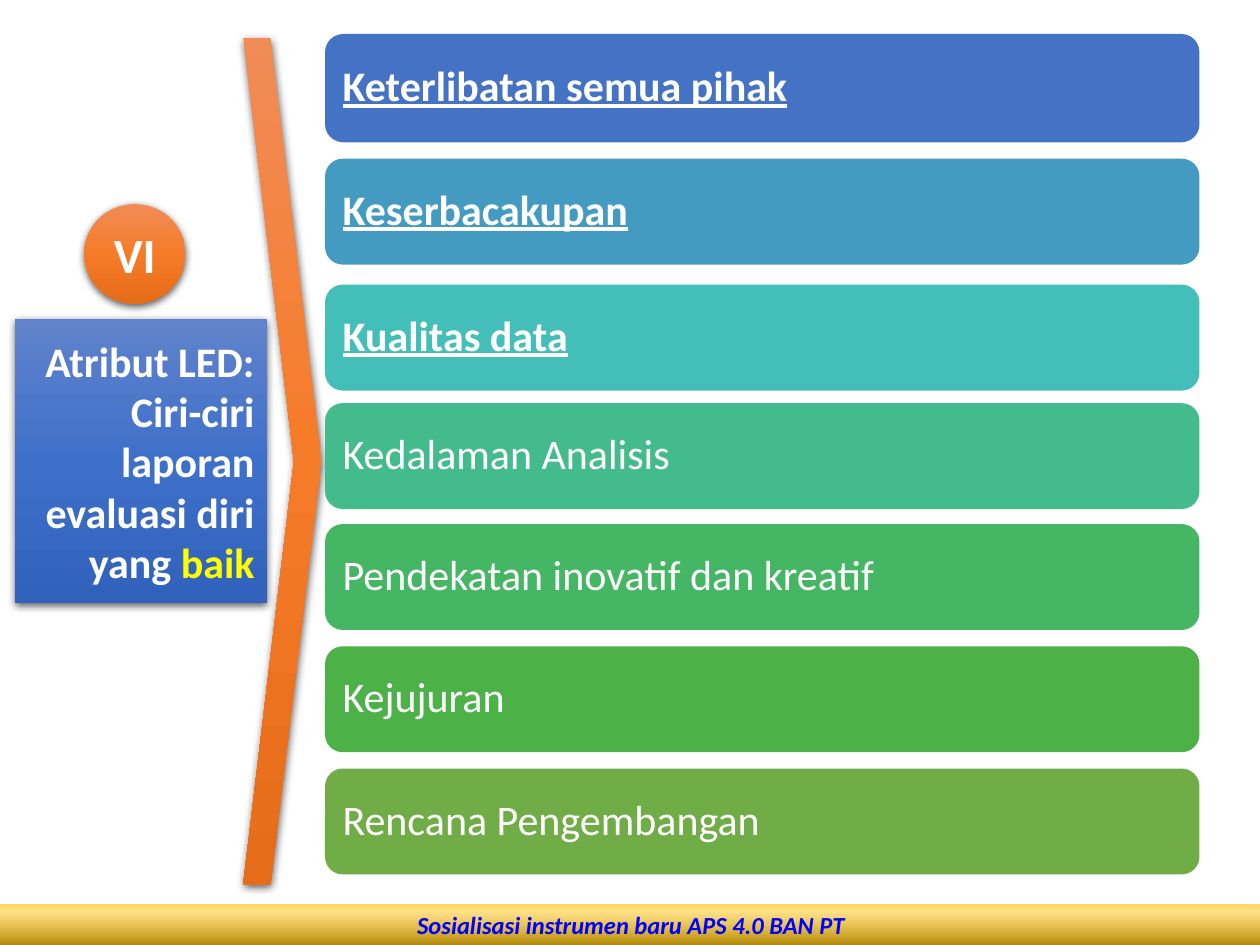
from dataclasses import dataclass

from lxml.etree import SubElement
from pptx import Presentation
from pptx.dml.color import RGBColor
from pptx.enum.shapes import MSO_SHAPE
from pptx.enum.text import MSO_ANCHOR, MSO_AUTO_SIZE, PP_ALIGN
from pptx.oxml.ns import qn
from pptx.util import Inches, Pt


@dataclass(frozen=True)
class Theme:
    font: str = "Calibri"
    white: str = "FFFFFF"
    highlight: str = "FFFF00"
    footer_text: str = "0000FF"
    shadow: str = "000000"
    # Gradient stops: position %, colour, opacity %
    orange: tuple = ((0, "F18C57", 100), (50, "F67B28", 100), (100, "E56C19", 100))
    blue: tuple = ((0, "6183CB", 100), (50, "3E70CA", 100), (100, "3062BB", 100))
    gold: tuple = ((0, "AB8100", 100), (83, "FFC208", 46), (100, "FFD966", 100))
    body_size: int = 24
    number_size: int = 28
    footer_size: int = 14


THEME = Theme()

# Label, top, height, colour, emphasised
ATTRIBUTES = [
    ("Keterlibatan semua pihak", 0.27, 0.86, "4472C4", True),
    ("Keserbacakupan", 1.26, 0.84, "449BC1", True),
    ("Kualitas data", 2.26, 0.84, "43BEB9", True),
    ("Kedalaman Analisis", 3.2, 0.84, "43BB8D", False),
    ("Pendekatan inovatif dan kreatif", 4.16, 0.84, "45B664", False),
    ("Kejujuran", 5.13, 0.84, "4CB146", False),
    ("Rencana Pengembangan", 6.1, 0.84, "70AD47", False),
]


def add_plain_shape(slide, kind, left, top, width, height):
    shape = slide.shapes.add_shape(
        kind, Inches(left), Inches(top), Inches(width), Inches(height))
    shape.shadow.inherit = False
    shape.line.fill.background()
    return shape


def add_color(parent, color, opacity):
    element = SubElement(parent, qn("a:srgbClr"), val=color)
    if opacity < 100:
        SubElement(element, qn("a:alpha"), val=str(opacity * 1000))


def fill_gradient(shape, stops, angle=90):
    """Fill with any number of stops; the angle runs clockwise."""
    shape.fill.gradient()
    gradient = shape._element.spPr.find(qn("a:gradFill"))
    for child in list(gradient):
        gradient.remove(child)
    stop_list = SubElement(gradient, qn("a:gsLst"))
    for position, color, opacity in stops:
        stop = SubElement(stop_list, qn("a:gs"), pos=str(position * 1000))
        add_color(stop, color, opacity)
    SubElement(gradient, qn("a:lin"), ang=str(angle * 60000), scaled="0")


def add_drop_shadow(shape):
    effects = shape._element.spPr.find(qn("a:effectLst"))
    shadow = SubElement(
        effects, qn("a:outerShdw"), blurRad=str(Pt(4.5)), dist=str(Pt(1.5)),
        dir=str(90 * 60000), algn="ctr", rotWithShape="0")
    add_color(shadow, THEME.shadow, 63)


def add_raised_shape(slide, kind, stops, *box):
    shape = add_plain_shape(slide, kind, *box)
    fill_gradient(shape, stops)
    add_drop_shadow(shape)
    return shape


def write_text(shape, text, size, alignment, color=THEME.white, bold=True):
    frame = shape.text_frame
    frame.word_wrap = True
    frame.vertical_anchor = MSO_ANCHOR.MIDDLE
    paragraph = frame.paragraphs[0]
    paragraph.alignment = alignment
    paragraph.add_run().text = text
    font = paragraph.font
    font.name = THEME.font
    font.size = Pt(size)
    font.bold = bold
    font.color.rgb = RGBColor.from_string(color)
    return paragraph


def add_footer(slide):
    footer = add_plain_shape(slide, MSO_SHAPE.RECTANGLE, -0.01, 7.17, 10.04, 0.34)
    fill_gradient(footer, THEME.gold, 270)
    footer.line.color.rgb = RGBColor.from_string(THEME.white)
    footer.line.width = Pt(0.75)
    paragraph = write_text(
        footer, "Sosialisasi instrumen baru APS 4.0 BAN PT",
        THEME.footer_size, PP_ALIGN.CENTER, THEME.footer_text)
    paragraph.font.italic = True
    footer.text_frame.vertical_anchor = MSO_ANCHOR.TOP
    footer.text_frame.auto_size = MSO_AUTO_SIZE.SHAPE_TO_FIT_TEXT


def add_topic(slide):
    chevron = add_raised_shape(
        slide, MSO_SHAPE.CHEVRON, THEME.orange, 1.93, 0.3, 0.62, 6.72)
    chevron.adjustments[0] = 0.65

    topic = add_raised_shape(
        slide, MSO_SHAPE.RECTANGLE, THEME.blue, 0.12, 2.53, 2, 2.26)
    paragraph = write_text(
        topic, "Atribut LED: Ciri-ciri laporan evaluasi diri yang ",
        THEME.body_size, PP_ALIGN.RIGHT)
    highlight = paragraph.add_run()
    highlight.text = "baik"
    highlight.font.color.rgb = RGBColor.from_string(THEME.highlight)

    number = add_raised_shape(
        slide, MSO_SHAPE.OVAL, THEME.orange, 0.67, 1.62, 0.8, 0.79)
    write_text(number, "VI", THEME.number_size, PP_ALIGN.CENTER)


def add_attribute(slide, label, top, height, color, emphasised):
    bar = add_plain_shape(
        slide, MSO_SHAPE.ROUNDED_RECTANGLE, 2.58, top, 6.94, height)
    bar.fill.solid()
    bar.fill.fore_color.rgb = RGBColor.from_string(color)
    paragraph = write_text(
        bar, label, THEME.body_size, PP_ALIGN.LEFT, bold=emphasised)
    paragraph.font.underline = emphasised
    paragraph.line_spacing = 0.9


def main():
    presentation = Presentation()
    presentation.slide_width = Inches(10)
    presentation.slide_height = Inches(7.5)
    slide = presentation.slides.add_slide(presentation.slide_layouts[6])
    add_footer(slide)
    add_topic(slide)
    for attribute in ATTRIBUTES:
        add_attribute(slide, *attribute)
    presentation.save("out.pptx")


if __name__ == "__main__":
    main()
